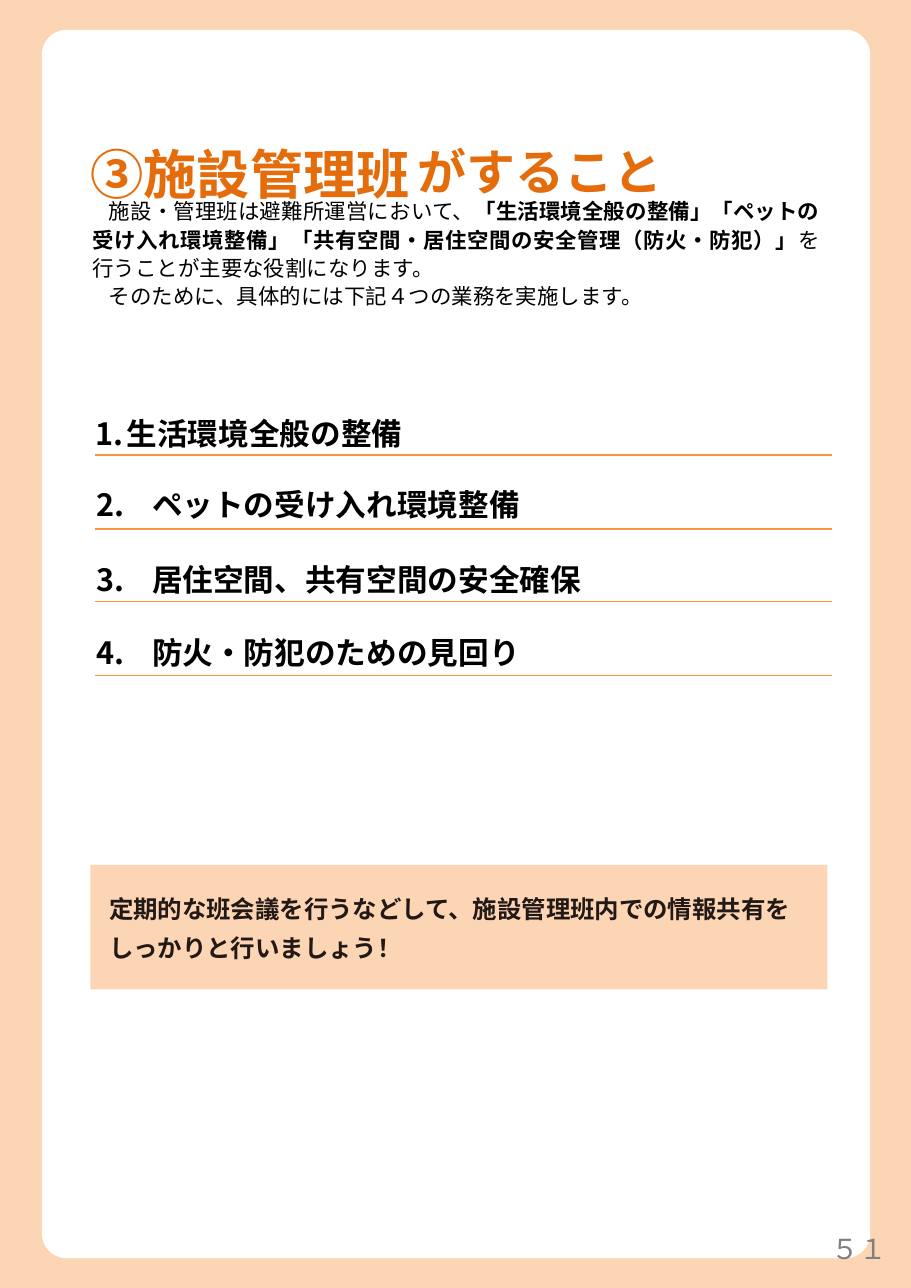
from pptx import Presentation
from pptx.dml.color import RGBColor
from pptx.enum.shapes import MSO_CONNECTOR, MSO_SHAPE
from pptx.enum.text import MSO_ANCHOR, MSO_AUTO_SIZE, PP_ALIGN
from pptx.oxml.ns import qn
from pptx.util import Pt
from lxml.etree import SubElement

PX = 9144  # 100 px to the inch
THEME = {
    "peach": RGBColor(0xFC, 0xD5, 0xB5),
    "white": RGBColor(0xFF, 0xFF, 0xFF),
    "orange": RGBColor(0xE4, 0x6C, 0x0A),
    "rule": RGBColor(0xF7, 0x96, 0x46),
    "black": RGBColor(0, 0, 0),
    "ink": RGBColor(0x22, 0x18, 0x15),
    "grey": RGBColor(0x80, 0x80, 0x80),
    "font": "Noto Sans CJK JP",
    "number_font": "Arial",
    "title": 60, "title_tail": 32, "item": 20, "note": 16, "body": 14, "number": 18,
}
TIGHT = (0, 1, 0, 0)
PADDED = (10, 5, 10, 5)


def write(sp, box, insets, paragraphs, size, color, font=THEME["font"], **format):
    """Place sp and fill it with paragraphs, each a list of (text, bold) runs."""
    sp.left, sp.top, sp.width, sp.height = [v * PX for v in box]
    tf = sp.text_frame
    tf.word_wrap, tf.auto_size = True, MSO_AUTO_SIZE.SHAPE_TO_FIT_TEXT
    tf.vertical_anchor = MSO_ANCHOR.TOP
    for side, inset in zip(("left", "top", "right", "bottom"), insets):
        setattr(tf, f"margin_{side}", inset * PX)
    for i, runs in enumerate(paragraphs):
        p = tf.paragraphs[0] if i == 0 else tf.add_paragraph()
        for name, value in ({"alignment": PP_ALIGN.LEFT} | format).items():
            setattr(p, name, value)
        for text, bold in runs:
            r = p.add_run()
            r.text = text
            r.font.size, r.font.bold, r.font.name = Pt(THEME[size]), bold, font
            r.font.color.rgb = THEME[color]
            SubElement(r.font._element, qn("a:ea"), typeface=font)
    return tf.paragraphs


def add_panel(kind, box, color):
    sp = s.shapes.add_shape(kind, *[v * PX for v in box])
    sp.shadow.inherit = False
    sp.fill.solid()
    sp.fill.fore_color.rgb = THEME[color]
    sp.line.fill.background()
    return sp


prs = Presentation()
prs.slide_width, prs.slide_height = 827 * PX, 1169 * PX
s = prs.slides.add_slide(prs.slide_layouts[5])
title = s.shapes.title

# Page frame, kept behind the title
frame = add_panel(MSO_SHAPE.RECTANGLE, (0, 0, 827, 1169), "peach")
card = add_panel(MSO_SHAPE.ROUNDED_RECTANGLE, (38, 27, 752, 1115), "white")
card.adjustments[0] = 0.03
for panel in (frame, card):
    title.element.addprevious(panel.element)

write(s.shapes.add_textbox(0, 0, 0, 0), (739, 1113, 82, 40), PADDED,
      [[("５１", False)]], "number", "grey", THEME["number_font"],
      alignment=PP_ALIGN.CENTER)

# Title: lowered large words, then a smaller tail
heading = write(title, (82, 89, 679, 69), TIGHT,
                [[("③施設管理", True), ("班", True), ("がすること", True)]],
                "title", "orange", space_before=Pt(1))[0]
name, last, tail = heading.runs
for r in (name, last):
    r.font._element.set("baseline", "-4000")
last.font._element.set("spc", "480")
tail.font.size = Pt(THEME["title_tail"])

# Numbered duties, each above a rule
duties = [
    (85, 376, "生活環境全般の整備"),
    (87, 440, "2.\tペットの受け入れ環境整備"),
    (87, 508, "3.\t居住空間、共有空間の安全確保"),
    (87, 574, "4.\t防火・防犯のための見回り"),
]
for i, (left, top, duty) in enumerate(duties):
    y = round(413 + i * 200 / 3) * PX
    rule = s.shapes.add_connector(MSO_CONNECTOR.STRAIGHT, 86 * PX, y, 755 * PX, y)
    rule.line.color.rgb, rule.line.width = THEME["rule"], Pt(1.04)
    SubElement(rule.element.spPr, qn("a:effectLst"))

    p = write(s.shapes.add_textbox(0, 0, 0, 0), (left, top, 561, 35), TIGHT,
              [[(duty, True)]], "item", "black", space_before=Pt(1 if i == 0 else 0))[0]
    pPr = p._p.get_or_add_pPr()
    margin, indent = (30, -28) if i == 0 else (1, 0)
    pPr.set("marL", str(margin * PX))
    pPr.set("indent", str(indent * PX))
    if i == 0:
        SubElement(pPr, qn("a:buFont"), typeface=THEME["font"])
        SubElement(pPr, qn("a:buAutoNum"), type="arabicPeriod")
    tabs = SubElement(pPr, qn("a:tabLst"))
    SubElement(tabs, qn("a:tab"), pos=str(30 * PX), algn="l")

# Reminder
add_panel(MSO_SHAPE.RECTANGLE, (82, 785, 669, 113), "peach")
reminder = "定期的な班会議を行うなどして、施設管理班内での情報共有をしっかりと行いましょう！"
write(s.shapes.add_textbox(0, 0, 0, 0), (99, 801, 633, 71), TIGHT,
      [[(reminder, True)]], "note", "ink", line_spacing=1.35, space_before=Pt(1))

# Introduction
intro = [
    [("施設・管理班は避難所運営において、", False),
     ("「生活環境全般の整備」「ペットの受け入れ環境整備」"
      "「共有空間・居住空間の安全管理（防火・防犯）」", True),
     ("を行うことが主要な役割になります。", False)],
    [("そのために、具体的には下記４つの業務を実施します。", False)],
]
for p in write(s.shapes.add_textbox(0, 0, 0, 0), (74, 173, 680, 113), PADDED, intro,
               "body", "black", alignment=PP_ALIGN.JUSTIFY, line_spacing=1.1):
    p._p.get_or_add_pPr().set("indent", str(15 * PX))

prs.save("out.pptx")
